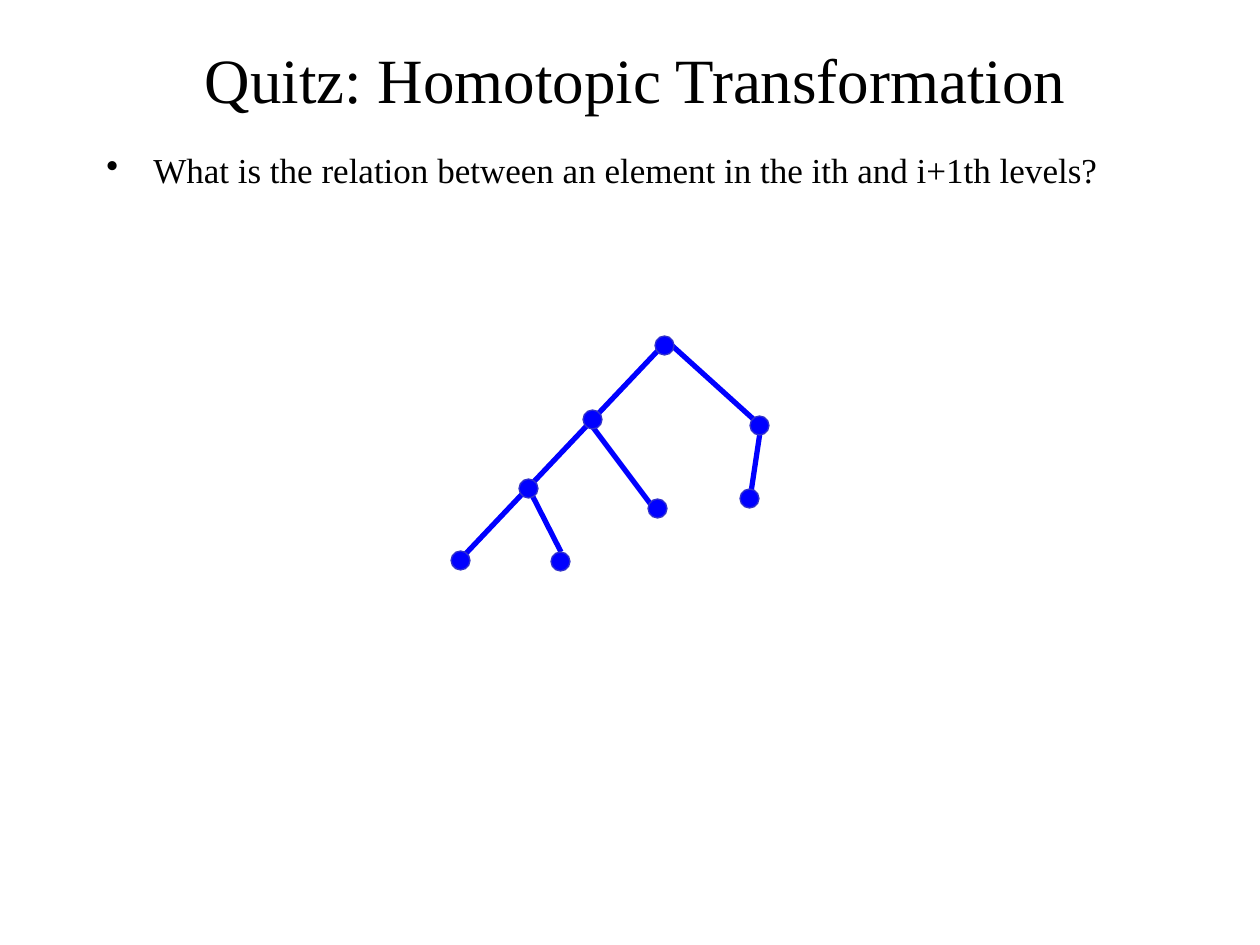
from lxml import etree
from pptx import Presentation, util as u
from pptx.dml.color import RGBColor
from pptx.enum import shapes, text
from pptx.oxml.ns import qn

HUE = {"back": "FFFFFF", "ink": "000000", "tree": "0000FF", "rim": "3333CC"}
FONT = "Times New Roman"
DOT = 19
# Node boxes and branches, relative to the tree's corner
NODES = [(132, 74), (204, 0), (197, 163), (100, 216),
         (0, 215), (68, 143), (299, 80), (289, 153)]
SPINE = [(5, 228), (216, 5)]
EDGES = [((216, 5), (310, 90)), ((141, 90), (204, 174)),
         ((78, 153), (110, 216)), ((310, 90), (299, 163))]


def px(n):
    return u.Emu(round(n * 914400 / 126))


def rgb(name):
    return RGBColor.from_string(HUE[name])


def stroke(line, name, width):
    line.color.rgb = rgb(name)
    line.width = u.Pt(width)


def write(slide, box, words, size, anchor):
    """Add a wrapped text box and return its paragraph."""
    frame = slide.shapes.add_textbox(*map(px, box)).text_frame
    frame.word_wrap = True
    frame.vertical_anchor = anchor
    frame.text = words
    para = frame.paragraphs[0]
    font = para.runs[0].font
    font.name, font.size = FONT, u.Pt(size)
    font.color.rgb = rgb("ink")
    return para


def title(slide, box):
    para = write(slide, box, "Quitz: Homotopic Transformation", 36,
                 text.MSO_ANCHOR.MIDDLE)
    para.alignment = text.PP_ALIGN.CENTER


def body(slide, box):
    para = write(slide, box, "What is the relation between an element "
                 "in the ith and i+1th levels?", 20, text.MSO_ANCHOR.TOP)
    para.line_spacing = 0.9
    para.space_before = u.Pt(4)
    props = para._p.get_or_add_pPr()
    props.set("marL", str(px(47)))
    props.set("indent", str(-px(47)))
    etree.SubElement(props, qn("a:buChar")).set("char", "•")


def tree(slide, left, top):
    group = slide.shapes.add_group_shape().shapes

    def spot(point):
        return px(left + point[0]), px(top + point[1])

    start, end = map(spot, SPINE)
    path = group.build_freeform(*start, scale=1.0)
    path.add_line_segments([end], close=False)
    spine = path.convert_to_shape()
    spine.shadow.inherit = False
    spine.fill.background()
    stroke(spine.line, "tree", 3)

    for start, end in EDGES:
        edge = group.add_connector(shapes.MSO_CONNECTOR.STRAIGHT,
                                   *spot(start), *spot(end))
        stroke(edge.line, "tree", 3)
        etree.SubElement(edge._element.spPr, qn("a:effectLst"))

    for point in NODES:
        node = group.add_shape(shapes.MSO_SHAPE.OVAL, *spot(point),
                               px(DOT), px(DOT))
        node.shadow.inherit = False
        node.fill.solid()
        node.fill.fore_color.rgb = rgb("tree")
        stroke(node.line, "rim", 0.75)


def main():
    deck = Presentation()
    deck.slide_width, deck.slide_height = px(1260), px(945)
    slide = deck.slides.add_slide(deck.slide_layouts[6])
    slide.background.fill.solid()
    slide.background.fill.fore_color.rgb = rgb("back")
    title(slide, (81, 24, 1109, 108))
    body(slide, (94, 147, 1061, 726))
    tree(slide, 451, 336)
    deck.save("out.pptx")


if __name__ == "__main__":
    main()
